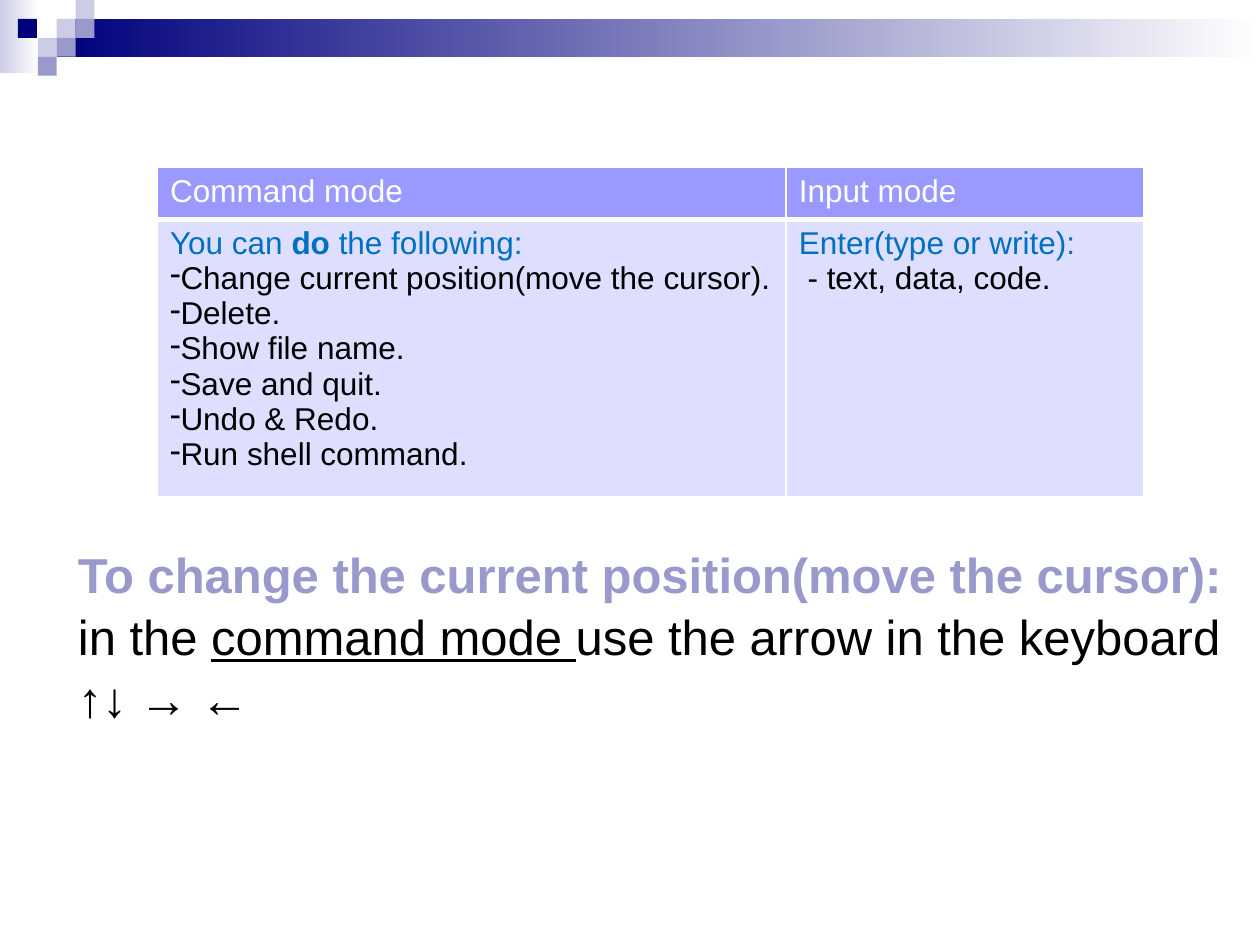
from dataclasses import dataclass

from lxml.etree import SubElement as Sub
from pptx import Presentation
from pptx.dml.color import RGBColor as Rgb
from pptx.enum.shapes import MSO_SHAPE as Kind
from pptx.oxml.ns import qn
from pptx.util import Inches, Pt


@dataclass(frozen=True)
class Theme:
    """Colours, fonts and type sizes of the slide."""
    navy: str = "00007D"
    mid: str = "9999CC"
    pale: str = "CCCCE6"
    white: str = "FFFFFF"
    black: str = "000000"
    blue: str = "0070C0"
    head: str = "9999FF"
    body: str = "DEDEFF"
    font: str = "Arial"
    serif: str = "Times New Roman"
    cell: int = 18
    note: int = 28


@dataclass(frozen=True)
class Block:
    """A rectangle with a plain fill, or one fading to a second colour."""
    left: float
    top: float
    wide: float
    high: float
    fill: str
    fade: str = ""


@dataclass(frozen=True)
class Span:
    """A run of text with its format."""
    text: str
    color: str
    bold: bool = False
    line: bool = False
    font: str = "Arial"


@dataclass(frozen=True)
class Line:
    """A paragraph of spans, with a dash bullet if asked."""
    spans: tuple
    dash: bool = False


T = Theme()
UNIT = 0.15
BARS = [
    Block(0, 0, 0.31, 0.58, T.pale, T.white),
    Block(0.45, UNIT, 9.55, 2 * UNIT, T.navy, T.white),
]
TILES = [
    Block(col * UNIT, row * UNIT, UNIT, UNIT, fill)
    for col, row, fill in [
        (3, 1, T.pale), (4, 0, T.pale), (4, 1, T.mid), (2, 2, T.pale),
        (0.95, 1, T.navy), (3, 2, T.mid), (2, 3, T.mid),
    ]
]
TASKS = [
    "Change current position(move the cursor).", "Delete.",
    "Show file name.", "Save and quit.", "Undo & Redo.",
    "Run shell command.",
]
HEADS = [[Line((Span(name, T.white),))] for name in ("Command mode", "Input mode")]
CELLS = [
    [Line((Span("You can ", T.blue), Span("do", T.blue, True),
           Span(" the following:", T.blue)))]
    + [Line((Span(task, T.black),), True) for task in TASKS],
    [Line((Span("Enter(type or write):", T.blue),)),
     Line((Span(" - text, data, code.", T.black),))],
]
NOTE = [
    Line((Span("To change the current position(move the cursor):", T.mid, True),)),
    Line((Span("in the ", T.black), Span("command mode ", T.black, line=True),
          Span("use the arrow in the keyboard", T.black))),
    Line((Span("↑↓ → ←", T.black, True, font=T.serif),)),
]


def draw(shapes, item: Block) -> None:
    """Draw one block of the top band."""
    box = shapes.add_shape(Kind.RECTANGLE, Inches(item.left), Inches(item.top),
                           Inches(item.wide), Inches(item.high))
    box.shadow.inherit = False
    box.line.fill.background()
    if item.fade:
        box.fill.gradient()
        box.fill.gradient_angle = 0
        for stop, color, place in zip(box.fill.gradient_stops,
                                      (item.fill, item.fade), (0, 1)):
            stop.color.rgb = Rgb.from_string(color)
            stop.position = place
    else:
        box.fill.solid()
        box.fill.fore_color.rgb = Rgb.from_string(item.fill)


def write(frame, lines: list, size: int, space: float = 1.0) -> None:
    """Write lines of formatted spans into a text frame."""
    for at, line in enumerate(lines):
        para = frame.add_paragraph() if at else frame.paragraphs[0]
        para.line_spacing = space
        if line.dash:
            props = para._p.get_or_add_pPr()
            props.set("marL", "0")
            props.set("indent", "0")
            Sub(props, qn("a:buFontTx"))
            Sub(props, qn("a:buChar"), char="-")
        for span in line.spans:
            run = para.add_run()
            run.text = span.text
            font = run.font
            font.name, font.size = span.font, Pt(size)
            font.bold, font.underline = span.bold, span.line
            font.color.rgb = Rgb.from_string(span.color)


def edge(cell, base: float) -> None:
    """Give a cell white borders, with its own bottom width."""
    props = cell._tc.get_or_add_tcPr()
    for side, width in (("L", 1), ("R", 1), ("T", 1), ("B", base)):
        rule = Sub(props, qn(f"a:ln{side}"), w=str(Pt(width)))
        Sub(Sub(rule, qn("a:solidFill")), qn("a:srgbClr"), val=T.white)


def grid(shapes) -> None:
    """Build the table of the two modes."""
    table = shapes.add_table(2, 2, Inches(1.25), Inches(1.33),
                             Inches(7.83), Inches(2.61)).table
    for col, wide in zip(table.columns, (4.99, 2.84)):
        col.width = Inches(wide)
    rows = ((0.41, HEADS, T.head, 3), (2.2, CELLS, T.body, 1))
    for at, (high, cells, fill, base) in enumerate(rows):
        table.rows[at].height = Inches(high)
        for col, lines in enumerate(cells):
            cell = table.cell(at, col)
            edge(cell, base)
            cell.fill.solid()
            cell.fill.fore_color.rgb = Rgb.from_string(fill)
            write(cell.text_frame, lines, T.cell)


def main() -> None:
    """Build and save the slide."""
    deck = Presentation()
    deck.slide_width, deck.slide_height = Inches(10), Inches(7.5)
    shapes = deck.slides.add_slide(deck.slide_layouts[6]).shapes
    for item in BARS + TILES:
        draw(shapes, item)
    note = shapes.add_textbox(Inches(0.52), Inches(4.25), Inches(9.39), Inches(1.99))
    note.text_frame.word_wrap = True
    write(note.text_frame, NOTE, T.note, 1.05)
    grid(shapes)
    deck.save("out.pptx")


if __name__ == "__main__":
    main()
